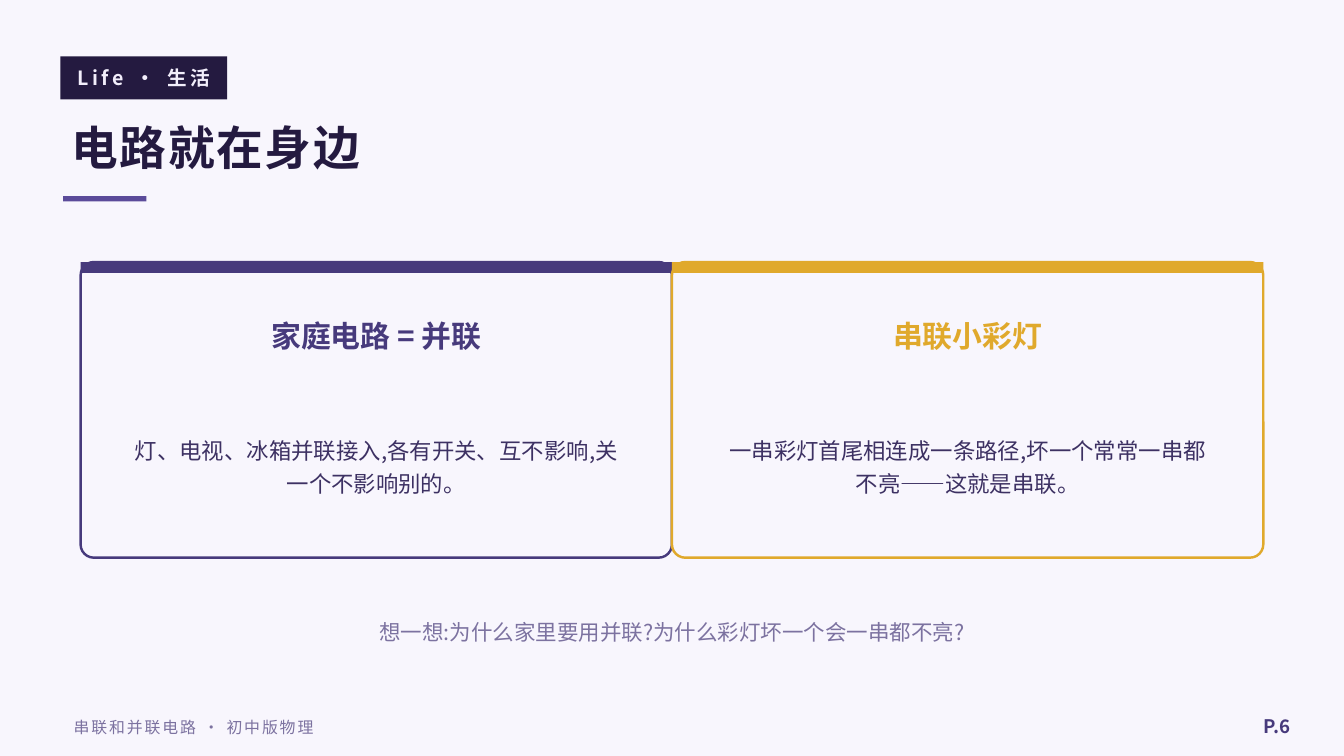
import dataclasses

import lxml.etree
import pptx
import pptx.dml.color
import pptx.enum.shapes
import pptx.enum.text
import pptx.oxml.ns
import pptx.util

PX = pptx.util.Inches(1) // 200
SHAPE = pptx.enum.shapes.MSO_SHAPE
ALIGN = pptx.enum.text.PP_ALIGN


@dataclasses.dataclass(frozen=True)
class Theme:
    font: str = "Noto Sans CJK SC"
    paper: str = "F8F6FD"
    ink: str = "241A40"
    tag_text: str = "F2EEFB"
    rule: str = "5B4B9A"
    violet: str = "473A7C"
    amber: str = "E0A92C"
    body: str = "3D3163"
    muted: str = "7C72A0"
    title_size: float = 25
    heading_size: float = 16
    body_size: float = 12
    question_size: float = 11.5
    tag_size: float = 10.5
    page_size: float = 10
    footer_size: float = 8.5
    body_leading: float = 18
    border: float = 1.3


THEME = Theme()


def px(*lengths):
    return [length * PX for length in lengths]


def rgb(code):
    return pptx.dml.color.RGBColor.from_string(code)


def write(holder, text, size, color, align=ALIGN.LEFT, bold=False,
          tracking=0, leading=None, wrap=True):
    frame = holder.text_frame
    frame.text = text
    frame.word_wrap = wrap
    frame.auto_size = pptx.enum.text.MSO_AUTO_SIZE.NONE
    frame.vertical_anchor = pptx.enum.text.MSO_ANCHOR.MIDDLE
    paragraph = frame.paragraphs[0]
    paragraph.alignment = align
    if leading:
        paragraph.line_spacing = pptx.util.Pt(leading)
    for run in paragraph.runs:
        run.font.name = THEME.font
        run.font.size = pptx.util.Pt(size)
        run.font.bold = bold
        run.font.color.rgb = rgb(color)
        properties = run.font._element
        east_asian = lxml.etree.SubElement(properties, pptx.oxml.ns.qn("a:ea"))
        east_asian.set("typeface", THEME.font)
        if tracking:
            properties.set("spc", str(tracking * 100))


def add_label(slide, box, text, size, color, **style):
    write(slide.shapes.add_textbox(*px(*box)), text, size, color, **style)


def add_block(slide, box, fill, kind=SHAPE.RECTANGLE, border=None):
    block = slide.shapes.add_shape(kind, *px(*box))
    block.shadow.inherit = False
    block.fill.solid()
    block.fill.fore_color.rgb = rgb(fill)
    if border:
        block.line.color.rgb = rgb(border)
        block.line.width = pptx.util.Pt(THEME.border)
    else:
        block.line.fill.background()
    return block


def add_title(slide, box, text):
    title = slide.shapes.title
    title.left, title.top, title.width, title.height = px(*box)
    write(title, text, THEME.title_size, THEME.ink, bold=True, tracking=1)


def add_card(slide, left, accent, heading, body):
    top, width = 390, 880
    card = add_block(slide, (left, top, width, 440), THEME.paper,
                     SHAPE.ROUNDED_RECTANGLE, accent)
    card.adjustments[0] = 0.045
    add_block(slide, (left, top, width, 16), accent)
    add_label(slide, (left, top + 60, width, 100), heading,
              THEME.heading_size, accent, align=ALIGN.CENTER, bold=True)
    add_label(slide, (left + 50, top + 190, width - 100, 220), body,
              THEME.body_size, THEME.body, align=ALIGN.CENTER,
              leading=THEME.body_leading)


def main():
    deck = pptx.Presentation()
    deck.slide_width, deck.slide_height = px(2000, 1125)
    slide = deck.slides.add_slide(deck.slide_layouts.get_by_name("Title Only"))
    slide.background.fill.solid()
    slide.background.fill.fore_color.rgb = rgb(THEME.paper)

    add_block(slide, (90, 84, 248, 64), THEME.ink)
    add_label(slide, (90, 82, 248, 68), "Life · 生活", THEME.tag_size,
              THEME.tag_text, align=ALIGN.CENTER, bold=True, tracking=2,
              wrap=False)
    add_title(slide, (86, 156, 1800, 124), "电路就在身边")
    add_block(slide, (94, 292, 124, 8), THEME.rule)

    cards = [
        (THEME.violet, "家庭电路 = 并联",
         "灯、电视、冰箱并联接入,各有开关、互不影响,关一个不影响别的。"),
        (THEME.amber, "串联小彩灯",
         "一串彩灯首尾相连成一条路径,坏一个常常一串都不亮——这就是串联。"),
    ]
    for column, (accent, heading, body) in enumerate(cards):
        add_card(slide, 120 + 880 * column, accent, heading, body)

    add_label(slide, (100, 890, 1800, 100),
              "想一想:为什么家里要用并联?为什么彩灯坏一个会一串都不亮?",
              THEME.question_size, THEME.muted, align=ALIGN.CENTER)
    add_label(slide, (90, 1052, 1300, 60), "串联和并联电路 · 初中版物理",
              THEME.footer_size, THEME.muted, tracking=1)
    add_label(slide, (1820, 1048, 120, 64), "P.6", THEME.page_size,
              THEME.violet, align=ALIGN.RIGHT, bold=True)
    deck.save("out.pptx")


if __name__ == "__main__":
    main()
